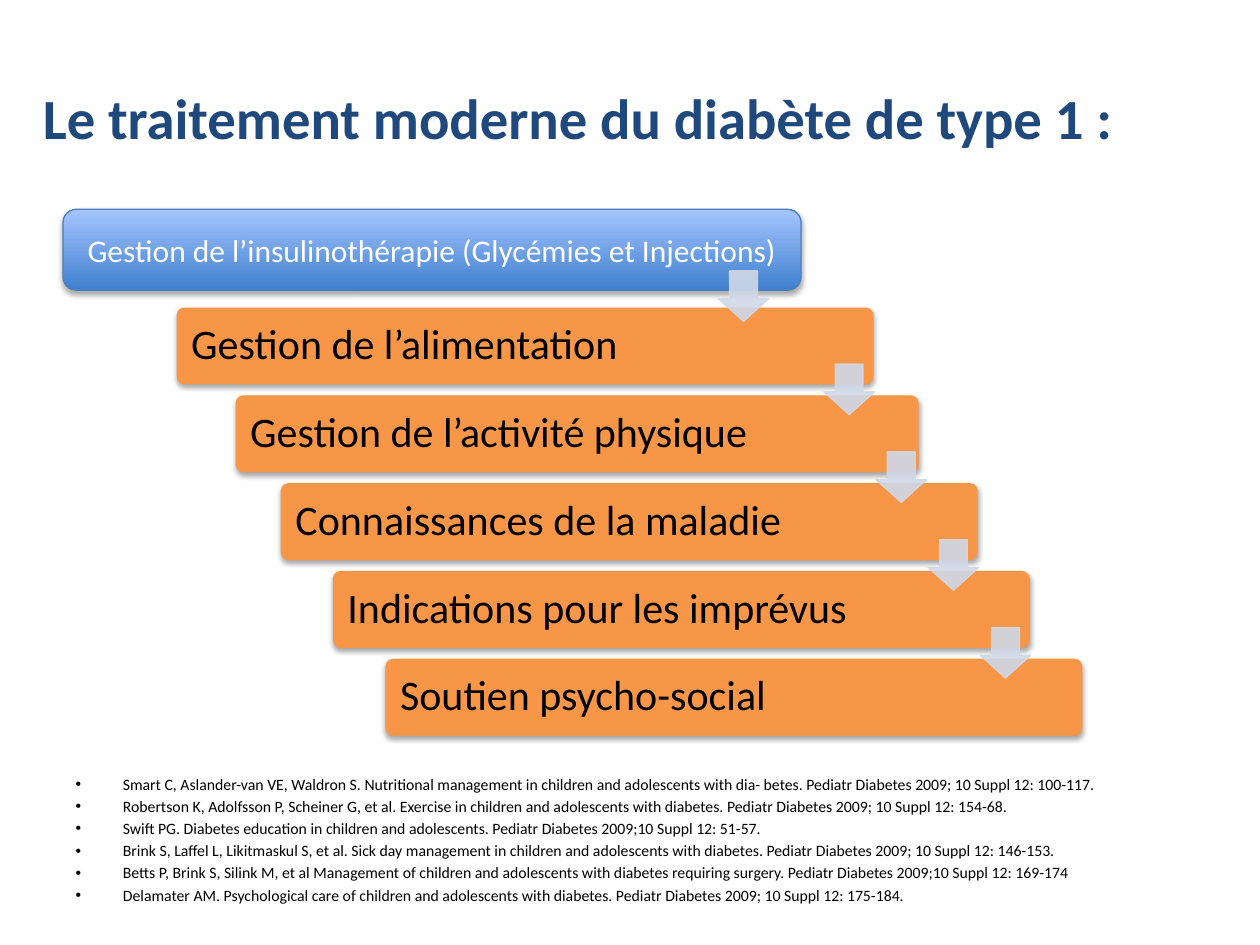
from pptx import Presentation
from pptx.util import Cm, Pt
from pptx.dml.color import RGBColor
from pptx.enum.shapes import MSO_SHAPE
from pptx.enum.text import MSO_ANCHOR, MSO_AUTO_SIZE, PP_ALIGN
from pptx.oxml import parse_xml
from pptx.oxml.ns import qn
from lxml import etree

ROUND, DOWN = MSO_SHAPE.ROUNDED_RECTANGLE, MSO_SHAPE.DOWN_ARROW
MIDDLE, TOP = MSO_ANCHOR.MIDDLE, MSO_ANCHOR.TOP
LEFT, CENTER = PP_ALIGN.LEFT, PP_ALIGN.CENTER
NO_FIT = MSO_AUTO_SIZE.NONE
NS = "http://schemas.openxmlformats.org/drawingml/2006/main"
SHADOW = (f'<a:effectLst xmlns:a="{NS}"><a:outerShdw blurRad="39370" dist="22860" '
          'dir="5400000" rotWithShape="0"><a:srgbClr val="000000">'
          '<a:alpha val="35000"/></a:srgbClr></a:outerShdw></a:effectLst>')


def color(code):
    return RGBColor.from_string(code)


def style(para, size, code, align=LEFT, bold=False):
    para.alignment = align
    for run in para.runs:
        run.font.name = "Calibri"
        run.font.size = Pt(size)
        run.font.bold = bold
        run.font.color.rgb = color(code)


prs = Presentation()
prs.slide_width, prs.slide_height = Cm(25.4), Cm(19.05)
slide = prs.slides.add_slide(prs.slide_layouts[1])
shapes = slide.shapes

# Title
title = shapes.title
title.left, title.top, title.width, title.height = Cm(0.61), Cm(0.76), Cm(24.13), Cm(3.18)
frame = title.text_frame
frame.text = "Le traitement moderne du diabète de type 1 :"
frame.vertical_anchor = MIDDLE
frame.auto_size = NO_FIT
style(frame.paragraphs[0], 32.4, "1F497D", bold=True)

# References
refs = [
    "Smart C, Aslander-van VE, Waldron S. Nutritional management in children and adolescents with dia- betes. Pediatr Diabetes 2009; 10 Suppl 12: 100-117.",
    "Robertson K, Adolfsson P, Scheiner G, et al. Exercise in children and adolescents with diabetes. Pediatr Diabetes 2009; 10 Suppl 12: 154-68.",
    "Swift PG. Diabetes education in children and adolescents. Pediatr Diabetes 2009;10 Suppl 12: 51-57.",
    "Brink S, Laffel L, Likitmaskul S, et al. Sick day management in children and adolescents with diabetes. Pediatr Diabetes 2009; 10 Suppl 12: 146-153.",
    "Betts P, Brink S, Silink M, et al Management of children and adolescents with diabetes requiring surgery. Pediatr Diabetes 2009;10 Suppl 12: 169-174",
    "Delamater AM. Psychological care of children and adolescents with diabetes. Pediatr Diabetes 2009; 10 Suppl 12: 175-184.",
]
body = slide.placeholders[1]
body.left, body.top, body.width, body.height = Cm(1.27), Cm(15.49), Cm(22.86), Cm(3.07)
frame = body.text_frame
frame.text = "\n".join(refs)
frame.vertical_anchor = TOP
frame.auto_size = NO_FIT
for i, para in enumerate(frame.paragraphs):
    para.space_before = Pt(1.8 if i else 0)
    style(para, 9, "000000")

# Steps: text, left, top, width, height
pitch = 1.77
steps = [("Gestion de l’insulinothérapie (Glycémies et Injections)", 1.27, 4.22, 14.88, 1.63)]
rows = [
    ("Gestion de l’alimentation", 3.56, 14.05),
    ("Gestion de l’activité physique", 4.75, 13.77),
    ("Connaissances de la maladie", 5.66, 14.05),
    ("Indications pour les imprévus", 6.71, 14.05),
    ("Soutien psycho-social", 7.77, 14.05),
]
for i, (text, left, width) in enumerate(rows):
    steps.append((text, left, 6.2 + i * pitch, width, 1.55))

for i, (text, *place) in enumerate(steps):
    bar = shapes.add_shape(ROUND, *map(Cm, place))
    bar.shadow.inherit = False
    frame = bar.text_frame
    frame.text = text
    frame.word_wrap = True
    frame.vertical_anchor = MIDDLE
    para = frame.paragraphs[0]
    if i == 0:
        bar.fill.gradient()
        bar.fill.gradient_angle = 90
        for stop, code in zip(bar.fill.gradient_stops, ("3F80CE", "A4C4FF")):
            stop.color.rgb = color(code)
        bar.line.color.rgb = color("4B7EBC")
        bar.line.width = Pt(0.75)
        style(para, 18, "FFFFFF", CENTER)
    else:
        bar.adjustments[0] = 0.1
        bar.fill.solid()
        bar.fill.fore_color.rgb = color("F79646")
        bar.line.fill.background()
        para.line_spacing = 0.9
        style(para, 24, "000000")
    # Soft shadow below the bar
    props = bar._element.spPr
    props.replace(props.find(qn("a:effectLst")), parse_xml(SHADOW))

# Arrows between steps
spots = [(14.48, 5.46)] + [(16.61 + i * 1.05, 7.34 + i * pitch) for i in range(4)]
for left, top in spots:
    arrow = shapes.add_shape(DOWN, Cm(left), Cm(top), Cm(1.02), Cm(1.02))
    arrow.shadow.inherit = False
    arrow.adjustments[0], arrow.adjustments[1] = 0.45, 0.55
    arrow.adjustments[0], arrow.adjustments[1] = 0.55, 0.45
    arrow.fill.solid()
    arrow.fill.fore_color.rgb = color("D0D8E8")
    arrow.line.color.rgb = color("D0D8E8")
    arrow.line.width = Pt(0.75)
    for tint in arrow._element.spPr.iter(qn("a:srgbClr")):
        etree.SubElement(tint, qn("a:alpha")).set("val", "90000")

prs.save("out.pptx")
